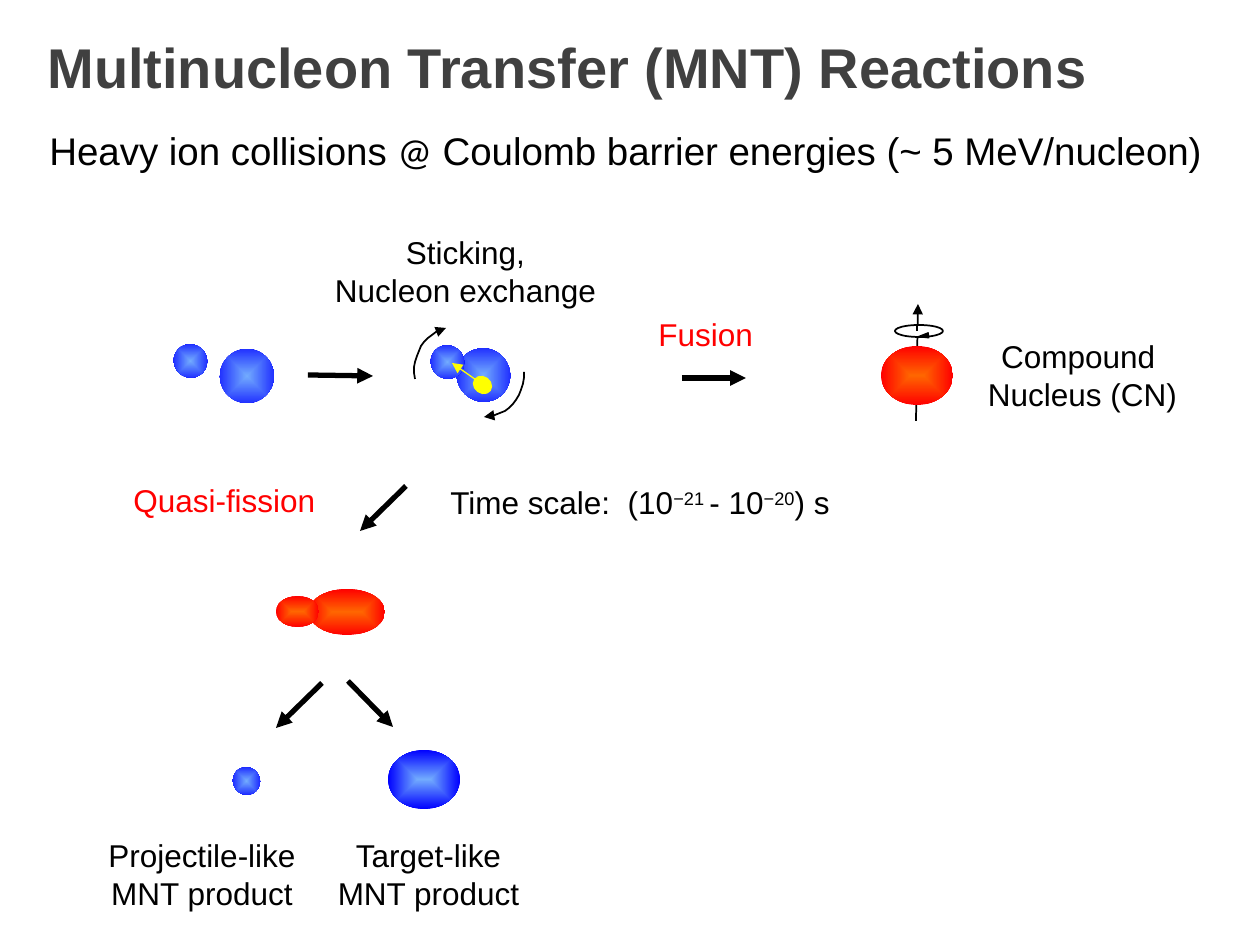
from lxml import etree
from pptx import Presentation
from pptx import util as u
from pptx.dml.color import RGBColor
from pptx.enum import shapes, text
from pptx.oxml.ns import qn

PX = 914400 / 126
COLORS = {
    "black": "000000", "white": "FFFFFF", "title": "404040", "red": "FF0000",
    "yellow": "FFFF00", "blue": "0000FF", "sky": "72ABFE", "orange": "FF6600",
}
COLD = ("sky", "blue")
HOT = ("orange", "red")


def px(*values):
    return [u.Emu(round(v * PX)) for v in values]


def rgb(name):
    return RGBColor.from_string(COLORS[name])


def set_line(sp, color, width, arrow=False):
    sp.line.color.rgb = rgb(color)
    sp.line.width = u.Pt(width)
    if arrow:
        ln = sp.line._get_or_add_ln()
        etree.SubElement(ln, qn("a:tailEnd"), type="triangle")


def add_label(s, box, lines, size=18, color="black", bold=False, center=False, wrap=False):
    tf = s.shapes.add_textbox(*px(*box)).text_frame
    tf.word_wrap = wrap
    tf.auto_size = text.MSO_AUTO_SIZE.SHAPE_TO_FIT_TEXT
    for i, runs in enumerate(lines):
        p = tf.paragraphs[0] if i == 0 else tf.add_paragraph()
        p.alignment = text.PP_ALIGN.CENTER if center else text.PP_ALIGN.LEFT
        p.font.name = "Arial"
        p.font.size = u.Pt(size)
        p.font.bold = bold
        p.font.color.rgb = rgb(color)
        for run in [runs] if isinstance(runs, str) else runs:
            wording, style = (run, None) if isinstance(run, str) else run
            r = p.add_run()
            r.text = wording
            if style == "super":
                r._r.get_or_add_rPr().set("baseline", "30000")
            elif style:
                r.font.name = style


def add_solid(s, kind, box, fill, line, width, rotation=0):
    sp = s.shapes.add_shape(kind, *px(*box))
    sp.shadow.inherit = False
    sp.rotation = rotation
    sp.fill.solid()
    sp.fill.fore_color.rgb = rgb(fill)
    set_line(sp, line, width)


def add_nucleus(s, box, shades, rotation=0):
    sp = s.shapes.add_shape(shapes.MSO_SHAPE.OVAL, *px(*box))
    sp.shadow.inherit = False
    sp.rotation = rotation
    sp.line.fill.background()
    sp.fill.gradient()
    for stop, shade in zip(sp.fill.gradient_stops, shades):
        stop.color.rgb = rgb(shade)
    lin = sp._element.spPr.find(".//" + qn("a:lin"))
    grad = lin.getparent()
    grad.remove(lin)
    center = etree.SubElement(grad, qn("a:path"), path="shape")
    etree.SubElement(center, qn("a:fillToRect"), l="50000", t="50000", r="50000", b="50000")


def add_line(s, ends, width=3, color="black", arrow=True):
    cn = s.shapes.add_connector(shapes.MSO_CONNECTOR.STRAIGHT, *px(*ends))
    set_line(cn, color, width, arrow)
    etree.SubElement(cn._element.spPr, qn("a:effectLst"))


def add_spin(s, controls, steps=12):
    points = []
    for i in range(steps + 1):
        t = i / steps
        weights = ((1 - t) ** 3, 3 * t * (1 - t) ** 2, 3 * t * t * (1 - t), t ** 3)
        points.append(tuple(sum(w * c[k] for w, c in zip(weights, controls)) for k in (0, 1)))
    fb = s.shapes.build_freeform(*points[0], scale=PX)
    fb.add_line_segments(points[1:], close=False)
    sp = fb.convert_to_shape()
    sp.shadow.inherit = False
    sp.fill.background()
    set_line(sp, "black", 1, arrow=True)


def draw_collision(s):
    add_nucleus(s, (220, 349, 54, 54), COLD, 312.7)
    add_nucleus(s, (174, 344, 33, 34), COLD, 312.7)
    add_line(s, (308, 375, 373, 376))
    add_nucleus(s, (457, 348, 53, 54), COLD, 312.7)
    add_nucleus(s, (431, 345, 33, 34), COLD, 312.7)
    add_spin(s, ((524, 372), (524, 397), (507, 417), (484, 417)))
    add_spin(s, ((415, 379), (411, 355), (425, 333), (446, 328)))
    add_label(s, (320, 227, 291, 89), ["Sticking,", "Nucleon exchange"], center=True, wrap=True)
    add_solid(s, shapes.MSO_SHAPE.OVAL, (473, 377, 19, 16), "yellow", "yellow", 0.75, 35.9)
    add_line(s, (479, 382, 452, 363), 0.75, "yellow")


def draw_fusion(s):
    add_label(s, (646, 309, 121, 50), ["Fusion"], color="red")
    add_line(s, (682, 378, 746, 378))
    add_line(s, (916, 421, 918, 304), 1)
    add_nucleus(s, (881, 346, 72, 59), HOT)
    add_solid(s, shapes.MSO_SHAPE.OVAL, (895, 325, 48, 12), "white", "black", 1)
    add_line(s, (917, 324, 917, 331), 1, arrow=False)
    add_solid(s, shapes.MSO_SHAPE.ISOSCELES_TRIANGLE, (921, 331, 5, 10), "black", "black", 0.75, 262.6)
    add_label(s, (974, 331, 217, 89), ["Compound ", "Nucleus (CN)"], center=True)


def draw_quasi_fission(s):
    add_line(s, (406, 486, 360, 531))
    add_label(s, (121, 475, 214, 50), ["Quasi-fission"], color="red", wrap=True)
    add_nucleus(s, (309, 589, 76, 46), HOT)
    add_nucleus(s, (276, 596, 43, 31), HOT)
    add_line(s, (322, 683, 276, 728))
    add_line(s, (348, 681, 393, 727))
    add_nucleus(s, (388, 750, 72, 59), COLD)
    add_nucleus(s, (233, 767, 27, 28), COLD, 330.8)
    add_label(s, (95, 830, 214, 89), ["Projectile-like", "MNT product"], center=True)
    add_label(s, (324, 830, 209, 89), ["Target-like", "MNT product"], center=True)


def main():
    prs = Presentation()
    prs.slide_width, prs.slide_height = px(1260, 945)
    s = prs.slides.add_slide(prs.slide_layouts[6])
    add_label(s, (35, 26, 1072, 81), ["Multinucleon Transfer (MNT) Reactions"], 32, "title", bold=True)
    add_label(s, (37, 121, 1191, 59), [
        ["Heavy ion collisions ", ("@", "Calibri"), " Coulomb barrier energies (~ 5 MeV/nucleon)"],
    ], 22, wrap=True)
    draw_collision(s)
    draw_fusion(s)
    draw_quasi_fission(s)
    add_label(s, (438, 477, 423, 50), [
        ["Time scale:  (10", ("−21 ", "super"), "- 10", ("−20", "super"), ") s"],
    ], wrap=True)
    prs.save("out.pptx")


if __name__ == "__main__":
    main()
